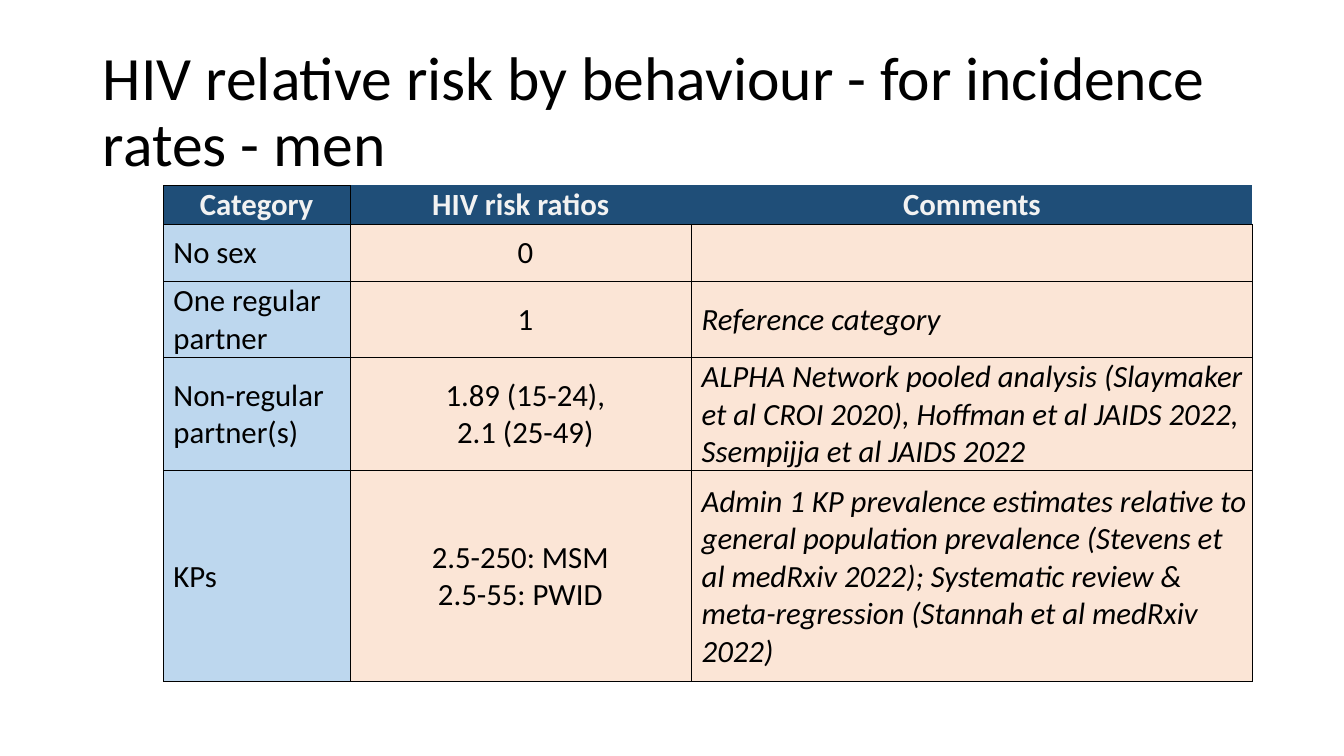
"""Build a slide with a table of HIV relative risks by behaviour for men."""
from lxml import etree
from pptx import Presentation
from pptx import util as u
from pptx.dml.color import RGBColor
from pptx.enum import text
from pptx.oxml.ns import qn

BLACK = RGBColor(0x00, 0x00, 0x00)
HEADING_TEXT = RGBColor(0xF2, 0xF2, 0xF2)
NAVY = RGBColor(0x1F, 0x4E, 0x78)
LIGHT_BLUE = RGBColor(0xBD, 0xD7, 0xEE)
PEACH = RGBColor(0xFB, 0xE5, 0xD6)

HEADINGS = ["Category", "HIV risk ratios", "Comments"]
HEADING_EDGES = ["LRTB", "LB", "B"]
RISKS = [
    ("No sex", "0", ""),
    ("One regular partner", "1", "Reference category"),
    ("Non-regular partner(s)", "1.89 (15-24),\n2.1 (25-49)",
     "ALPHA Network pooled analysis (Slaymaker et al CROI 2020), "
     "Hoffman et al JAIDS 2022, Ssempijja et al JAIDS 2022"),
    ("KPs", "2.5-250: MSM\n2.5-55: PWID",
     "Admin 1 KP prevalence estimates relative to general population "
     "prevalence (Stevens et al medRxiv 2022); Systematic review & "
     "meta-regression (Stannah et al medRxiv 2022)"),
]
COLUMN_WIDTHS = [1.85, 3.39, 5.56]
ROW_HEIGHTS = [0.3, 0.57, 0.57, 0.88, 2.09]


class RiskSlide:
    font = "Calibri"
    title_size = u.Pt(44)
    table_size = u.Pt(22)
    border = u.Pt(0.5)

    def __init__(self, deck):
        self.slide = deck.slides.add_slide(deck.slide_layouts[5])

    def words(self, paragraph, wording, size, color, bold=False, italic=False):
        run = paragraph.add_run()
        run.text = wording
        run.font.name, run.font.size = self.font, size
        run.font.bold, run.font.italic = bold, italic
        run.font.color.rgb = color

    def title(self, wording, left, top, width, height):
        heading = self.slide.shapes.title
        heading.left, heading.top = u.Inches(left), u.Inches(top)
        heading.width, heading.height = u.Inches(width), u.Inches(height)
        frame = heading.text_frame
        frame.auto_size = text.MSO_AUTO_SIZE.NONE
        frame.vertical_anchor = text.MSO_ANCHOR.MIDDLE
        line = frame.paragraphs[0]
        line.alignment, line.line_spacing = text.PP_ALIGN.LEFT, 0.9
        self.words(line, wording, self.title_size, BLACK)

    def edges(self, cell, shown):
        properties = cell._tc.get_or_add_tcPr()
        for position, side in enumerate("LRTB"):
            edge = etree.Element(qn(f"a:ln{side}"), w=str(self.border))
            properties.insert(position, edge)
            if side in shown:
                paint = etree.SubElement(edge, qn("a:solidFill"))
                etree.SubElement(paint, qn("a:srgbClr"), val=str(BLACK))
            else:
                etree.SubElement(edge, qn("a:noFill"))

    def cell(self, cell, wording, fill, centred, anchor, inset, edges, **style):
        cell.fill.solid()
        cell.fill.fore_color.rgb = fill
        cell.vertical_anchor = anchor
        cell.margin_left = u.Inches(inset)
        cell.margin_right = cell.margin_top = u.Inches(0.01)
        cell.margin_bottom = 0
        self.edges(cell, edges)
        frame = cell.text_frame
        for number, sentence in enumerate(wording.split("\n") if wording else []):
            line = frame.add_paragraph() if number else frame.paragraphs[0]
            line.alignment = text.PP_ALIGN.CENTER if centred else text.PP_ALIGN.LEFT
            self.words(line, sentence, self.table_size, **style)

    def table(self, left, top):
        risks = self.slide.shapes.add_table(
            len(ROW_HEIGHTS), len(COLUMN_WIDTHS), u.Inches(left), u.Inches(top),
            u.Inches(sum(COLUMN_WIDTHS)), u.Inches(sum(ROW_HEIGHTS))).table
        risks.first_row = risks.horz_banding = False
        for column, width in zip(risks.columns, COLUMN_WIDTHS):
            column.width = u.Inches(width)
        for row, height in zip(risks.rows, ROW_HEIGHTS):
            row.height = u.Inches(height)
        for column, heading in enumerate(HEADINGS):
            self.cell(risks.cell(0, column), heading, NAVY, True,
                      text.MSO_ANCHOR.BOTTOM, 0.01, HEADING_EDGES[column],
                      color=HEADING_TEXT, bold=True)
        for row, entries in enumerate(RISKS, 1):
            for column, entry in enumerate(entries):
                inset = 0 if entries[0] == "KPs" and column == 1 else 0.1
                self.cell(risks.cell(row, column), entry,
                          PEACH if column else LIGHT_BLUE, column == 1,
                          text.MSO_ANCHOR.MIDDLE, inset, "LRTB",
                          color=BLACK, italic=column == 2)


def main():
    deck = Presentation()
    deck.slide_width, deck.slide_height = u.Inches(13.33), u.Inches(7.5)
    page = RiskSlide(deck)
    page.title("HIV relative risk by behaviour - for incidence rates - men",
               0.92, 0.4, 11.5, 1.45)
    page.table(1.62, 1.84)
    deck.save("out.pptx")


if __name__ == "__main__":
    main()
